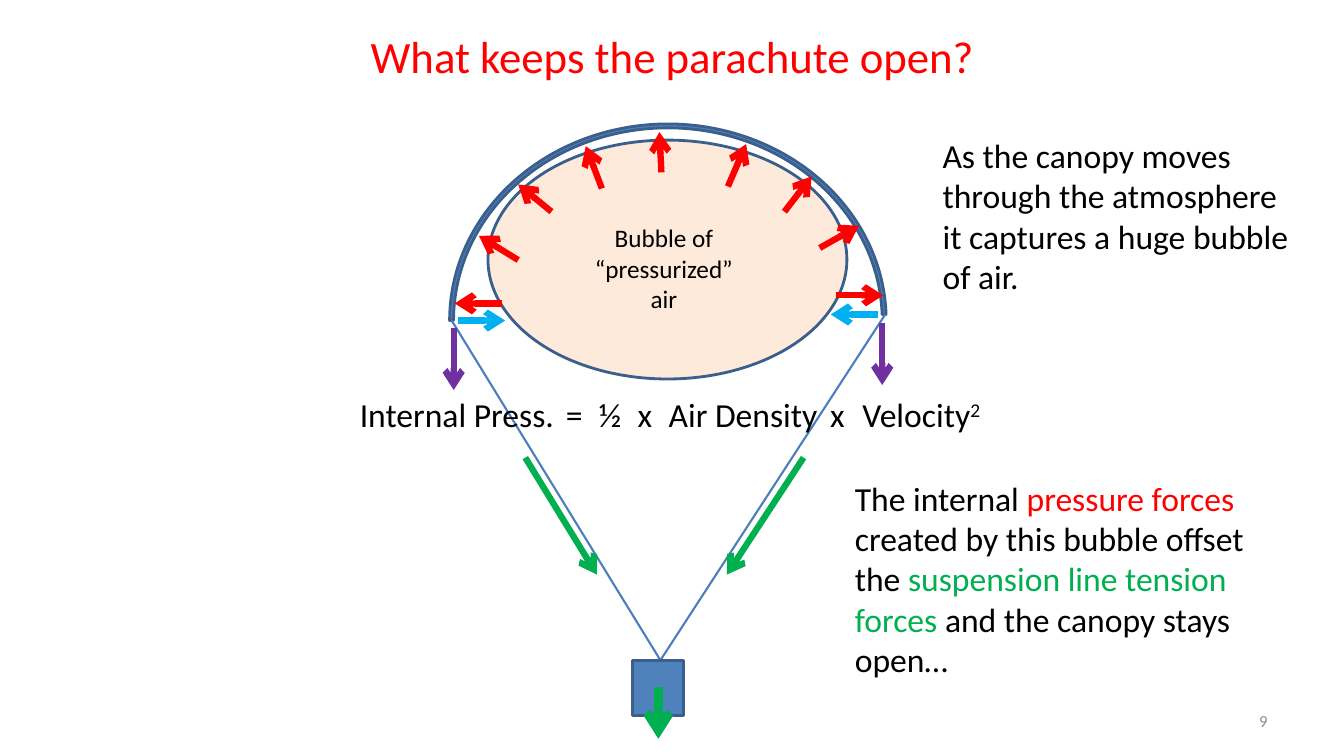
from lxml import etree
from pptx import Presentation
from pptx.dml.color import RGBColor
from pptx.enum.shapes import MSO_CONNECTOR, MSO_SHAPE
from pptx.enum.text import MSO_ANCHOR, PP_ALIGN
from pptx.oxml.ns import qn
from pptx.util import Inches, Pt

ARC, RECT, OVAL = MSO_SHAPE.BLOCK_ARC, MSO_SHAPE.RECTANGLE, MSO_SHAPE.OVAL
STRAIGHT = MSO_CONNECTOR.STRAIGHT
LEFT, CENTER, RIGHT = PP_ALIGN.LEFT, PP_ALIGN.CENTER, PP_ALIGN.RIGHT
TOP, MIDDLE = MSO_ANCHOR.TOP, MSO_ANCHOR.MIDDLE

COLORS = {
    "text": "000000", "number": "8C8C8C",
    "pressure": "FF0000", "tension": "00B050",
    "inward": "00B0F0", "downward": "7030A0",
    "canopy": "4F81BD", "outline": "3A5F8C",
    "cord": "4B7EBC", "bubble": "FDEADA",
}
COLUMNS, ROWS = 133.3, 75  # square cells, ten to the inch


def cells(*counts):
    return [Inches(count / 10) for count in counts]


def rgb(name):
    return RGBColor.from_string(COLORS[name])


def write(frame, runs, size=24, color="text", align=LEFT, anchor=TOP):
    """Fill a frame with one paragraph of (text, overrides) runs.

    Overrides are color, spacing (points) and raised (percent).
    """
    frame.word_wrap = True
    frame.vertical_anchor = anchor
    paragraph = frame.paragraphs[0]
    paragraph.alignment = align
    for words, overrides in runs:
        run = paragraph.add_run()
        run.text = words
        run.font.name = "Calibri"
        run.font.size = Pt(size)
        run.font.color.rgb = rgb(overrides.get("color", color))
        properties = run.font._element
        if "spacing" in overrides:
            properties.set("spc", str(round(overrides["spacing"] * 100)))
        if "raised" in overrides:
            properties.set("baseline", str(overrides["raised"] * 1000))


class Diagram:
    def __init__(self, slide):
        self.slide = slide
        self.shapes = slide.shapes

    def title(self, box, words, **style):
        heading = self.shapes.title
        heading.left, heading.top, heading.width, heading.height = cells(*box)
        write(heading.text_frame, [(words, {})], **style)

    def text(self, box, *runs, **style):
        label = self.shapes.add_textbox(*cells(*box))
        write(label.text_frame, runs, **style)

    def shape(self, kind, box, fill, adjustments=()):
        body = self.shapes.add_shape(kind, *cells(*box))
        for index, value in enumerate(adjustments):
            body.adjustments[index] = value
        body.shadow.inherit = False
        body.fill.solid()
        body.fill.fore_color.rgb = rgb(fill)
        body.line.color.rgb = rgb("outline")
        body.line.width = Pt(2)

    def line(self, ends, color, width):
        connector = self.shapes.add_connector(STRAIGHT, *cells(*ends))
        connector.line.color.rgb = rgb(color)
        connector.line.width = Pt(width)
        etree.SubElement(connector._element.spPr, qn("a:effectLst"))
        return connector

    def arrow(self, ends, color, width=4.5):
        connector = self.line(ends, color, width)
        head = etree.SubElement(connector.line._get_or_add_ln(), qn("a:tailEnd"))
        head.set("type", "arrow")


FORCES = {
    "tension": [(79.7, 45.4, 72.1, 57), (52.1, 45.4, 59.2, 57)],
    "inward": [(87.1, 31.2, 82.4, 31.2), (45.4, 31.8, 50.1, 31.8)],
    "downward": [(87.5, 32, 87.5, 38.2), (45, 32.5, 45, 38.7)],
    "pressure": [
        (49.8, 30.1, 45.1, 30.1), (82.9, 29.3, 87.6, 29.3),
        (51.4, 25.8, 47.5, 23.4), (54.7, 21, 51.4, 18.3),
        (59.7, 18.7, 58.1, 14.5), (65.6, 17.1, 65.4, 13.1),
        (81.3, 24.6, 85.2, 22.4), (77.8, 21, 80.5, 17.5),
        (72.2, 18.5, 74, 14.3),
    ],
}
PAYLOAD_TOP = (65.5, 65.5)
CANOPY_EDGES = [(44.8, 31.8), (87.8, 31.2)]


def main():
    presentation = Presentation()
    presentation.slide_width, presentation.slide_height = cells(COLUMNS, ROWS)
    layout = presentation.slide_layouts.get_by_name("Title Only")
    diagram = Diagram(presentation.slides.add_slide(layout))

    diagram.title((21.7, 1.3, 90, 8.5), "What keeps the parachute open?",
                  size=32, color="pressure", align=CENTER, anchor=MIDDLE)

    diagram.shape(ARC, (44.6, 12.3, 43.3, 39), "canopy", (108, 215.04, 0.01))
    for edge in CANOPY_EDGES:
        diagram.line(edge + PAYLOAD_TOP, "cord", 1.5)
    diagram.shape(RECT, (62.7, 65.5, 5.1, 5.5), "canopy")
    diagram.shape(OVAL, (48.4, 13.9, 35.6, 23.7), "bubble")
    diagram.text((56.6, 21.6, 18.5, 10.1), ("Bubble of “pressurized” air", {}),
                 size=18, align=CENTER)

    for force, arrows in FORCES.items():
        for ends in arrows:
            diagram.arrow(ends, force)
    diagram.arrow((65.3, 68.2, 65.3, 73.3), "tension", 6)

    diagram.text((92.5, 12.9, 37.2, 17.2),
                 ("As the canopy moves through the atmosphere "
                  "it captures a huge bubble of air.", {}))
    diagram.text((83.8, 46.9, 44.2, 21.2),
                 ("The internal ", {}),
                 ("pressure forces ", {"color": "pressure"}),
                 ("created by this bubble offset the ", {}),
                 ("suspension line tension forces ", {"color": "tension"}),
                 ("and the canopy stays open…", {}))
    diagram.text((34.7, 38.6, 64, 8.1),
                 ("Internal Press.", {}), (" = ½ x ", {"spacing": 3.1}),
                 ("Air Density", {}), (" x ", {"spacing": 3.6}),
                 ("Velocity", {}), ("2", {"raised": 30}))
    diagram.text((95.6, 69.5, 31.1, 4), ("9", {}),
                 size=12, color="number", align=RIGHT, anchor=MIDDLE)

    presentation.save("out.pptx")


if __name__ == "__main__":
    main()
